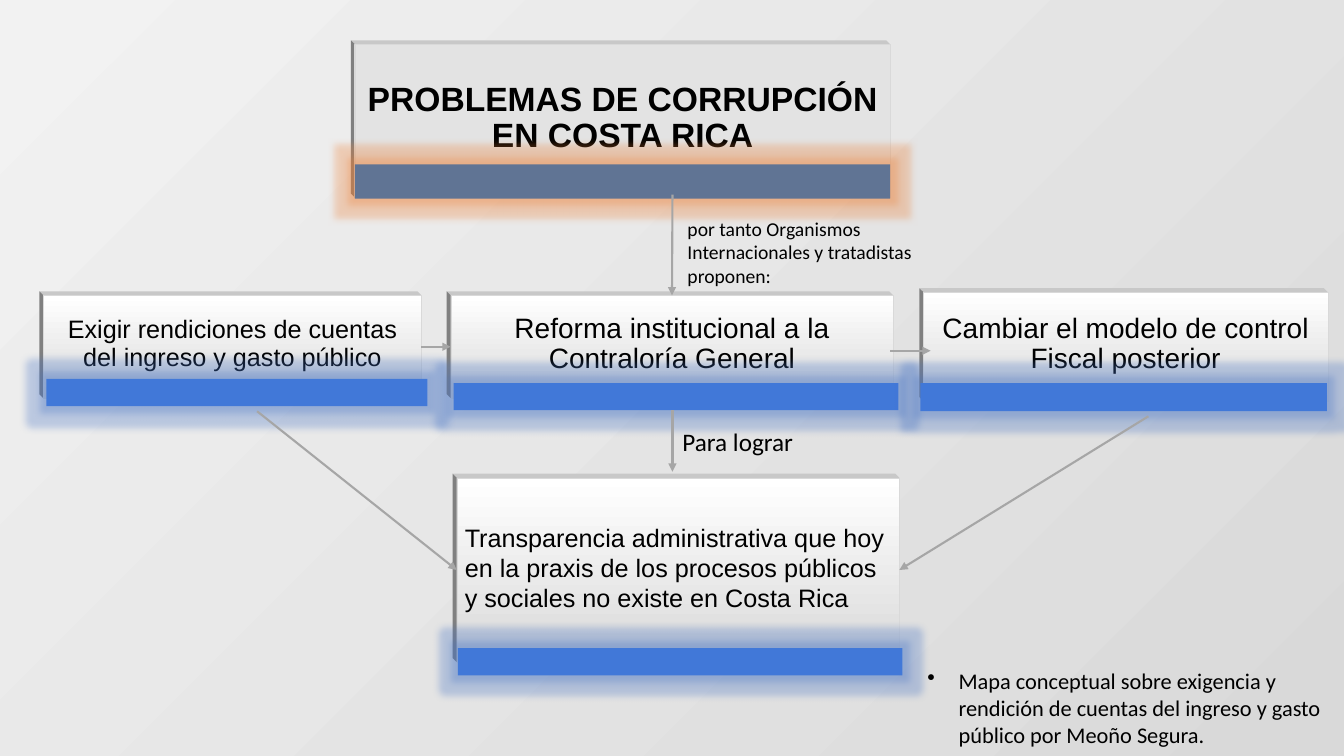
from lxml.etree import SubElement
from pptx import Presentation
from pptx.dml.color import RGBColor
from pptx.enum.shapes import MSO_CONNECTOR, MSO_SHAPE
from pptx.enum.text import MSO_ANCHOR, PP_ALIGN
from pptx.oxml.ns import qn
from pptx.util import Inches, Pt

BLACK = RGBColor(0x00, 0x00, 0x00)
WHITE = RGBColor(0xFF, 0xFF, 0xFF)
TITLE_FILL = RGBColor(0xE3, 0xE3, 0xE3)
SILVER = RGBColor(0xD9, 0xD9, 0xD9)
PALE = RGBColor(0xF2, 0xF2, 0xF2)
BEVEL_TOP = RGBColor(0xC8, 0xC8, 0xC8)
BEVEL_SIDE = RGBColor(0x80, 0x80, 0x80)
ARROW = RGBColor(0xA6, 0xA6, 0xA6)
BLUE = RGBColor(0x41, 0x78, 0xD8)
SLATE = RGBColor(0x60, 0x74, 0x94)
BLUE_GLOW = RGBColor(0x44, 0x72, 0xC4)
ORANGE_GLOW = RGBColor(0xED, 0x7D, 0x31)
BEVEL = 0.04
TOP, LEFT, RIGHT = 0, 1, 3


def set_gradient(fill, start, end, angle):
    fill.gradient()
    fill.gradient_angle = angle
    for stop, color in zip(fill.gradient_stops, (start, end)):
        stop.color.rgb = color


def add_bevel_face(slide, points, color):
    builder = slide.shapes.build_freeform(
        Inches(points[0][0]), Inches(points[0][1]))
    builder.add_line_segments([(Inches(x), Inches(y)) for x, y in points[1:]])
    face = builder.convert_to_shape()
    face.shadow.inherit = False
    face.fill.solid()
    face.fill.fore_color.rgb = color
    face.line.fill.background()


def add_bevel(slide, left, top, width, height):
    right, bottom = left + width, top + height
    corner = (left - BEVEL, top - BEVEL)
    add_bevel_face(slide, [corner, (right - BEVEL, top - BEVEL),
                           (right, top), (left, top)], BEVEL_TOP)
    add_bevel_face(slide, [corner, (left, top), (left, bottom),
                           (left - BEVEL, bottom - BEVEL)], BEVEL_SIDE)


def add_bar(slide, box, color, glow_color):
    bar = slide.shapes.add_shape(MSO_SHAPE.RECTANGLE, *map(Inches, box))
    bar.fill.solid()
    bar.fill.fore_color.rgb = color
    bar.line.fill.background()
    bar.shadow.inherit = False
    effects = bar._element.spPr.find(qn("a:effectLst"))
    glow = SubElement(effects, qn("a:glow"), rad=str(Inches(0.14)))
    tint = SubElement(glow, qn("a:srgbClr"), val=str(glow_color))
    SubElement(tint, qn("a:alpha"), val="30000")


def add_card(slide, box, bar_box, text, size, title=False, centred=True):
    """Add a bevelled panel with its text and the glowing bar at its foot."""
    add_bevel(slide, *box)
    card = slide.shapes.add_shape(MSO_SHAPE.RECTANGLE, *map(Inches, box))
    card.shadow.inherit = False
    card.line.color.rgb = SILVER
    card.line.width = Pt(1 if title else 0.25)
    if title:
        card.fill.solid()
        card.fill.fore_color.rgb = TITLE_FILL
    else:
        set_gradient(card.fill, WHITE, SILVER, 270)
    frame = card.text_frame
    frame.word_wrap = True
    frame.vertical_anchor = MSO_ANCHOR.MIDDLE
    frame.margin_left = frame.margin_right = Inches(0.01 if title else 0.08)
    frame.margin_top = Inches(0.01)
    frame.margin_bottom = Inches(0.06)
    paragraph = frame.paragraphs[0]
    paragraph.alignment = PP_ALIGN.CENTER if centred else PP_ALIGN.LEFT
    paragraph.line_spacing = 0.9 if centred else 1.0
    write(paragraph, text, "Arial", size)
    paragraph.font.bold = title
    add_bar(slide, bar_box, SLATE if title else BLUE,
            ORANGE_GLOW if title else BLUE_GLOW)
    return card


def write(paragraph, text, font_name, size):
    paragraph.text = text
    paragraph.font.name = font_name
    paragraph.font.size = Pt(size)
    paragraph.font.color.rgb = BLACK


def add_label(slide, box, text, size, wrap=True, bullet=False):
    label = slide.shapes.add_textbox(*map(Inches, box))
    label.text_frame.word_wrap = wrap
    paragraph = label.text_frame.paragraphs[0]
    write(paragraph, text, "Calibri", size)
    if bullet:
        properties = paragraph._p.get_or_add_pPr()
        properties.set("marL", str(Inches(0.31)))
        properties.set("indent", str(-Inches(0.31)))
        marker = properties.makeelement(qn("a:buChar"), {"char": "•"})
        properties.insert(0, marker)


def add_arrow(slide, start, end, begin=None, finish=None):
    """Add an arrow; begin and finish are optional (shape, side) joins."""
    arrow = slide.shapes.add_connector(
        MSO_CONNECTOR.STRAIGHT, *map(Inches, start + end))
    if begin:
        arrow.begin_connect(*begin)
    if finish:
        arrow.end_connect(*finish)
    arrow.line.color.rgb = ARROW
    arrow.line.width = Pt(1.5)
    SubElement(arrow.line._get_or_add_ln(), qn("a:tailEnd"), type="triangle")
    SubElement(arrow._element.spPr, qn("a:effectLst"))


def add_concept_map(slide):
    add_card(slide, (3.52, 0.44, 5.31, 1.52), (3.52, 1.63, 5.31, 0.34),
             "PROBLEMAS DE CORRUPCIÓN EN COSTA RICA", 24, title=True)
    accounts = add_card(
        slide, (0.43, 2.93, 3.75, 1.02), (0.46, 3.76, 3.78, 0.27),
        "Exigir rendiciones de cuentas del ingreso y gasto público", 18)
    reform = add_card(
        slide, (4.47, 2.93, 4.39, 1.02), (4.5, 3.8, 4.41, 0.27),
        "Reforma institucional a la Contraloría General", 20)
    add_card(slide, (9.16, 2.9, 4.01, 1.08), (9.13, 3.8, 4.03, 0.28),
             "Cambiar el modelo de control Fiscal posterior", 20)
    transparency = add_card(
        slide, (4.53, 4.74, 4.39, 1.83), (4.54, 6.43, 4.41, 0.27),
        "Transparencia administrativa que hoy en la praxis de los procesos "
        "públicos y sociales no existe en Costa Rica", 18, centred=False)

    add_arrow(slide, (6.67, 1.93), (6.67, 2.93), finish=(reform, TOP))
    add_arrow(slide, (4.18, 3.44), (4.47, 3.44),
              (accounts, RIGHT), (reform, LEFT))
    add_arrow(slide, (8.83, 3.48), (9.23, 3.48))
    add_arrow(slide, (2.55, 4.08), (4.53, 5.66), finish=(transparency, LEFT))
    add_arrow(slide, (6.67, 4.07), (6.67, 4.68))
    add_arrow(slide, (11.39, 4.13), (8.92, 5.66), finish=(transparency, RIGHT))


def add_labels(slide):
    add_label(slide, (6.72, 2.1, 2.61, 0.81),
              "por tanto Organismos Internacionales y tratadistas proponen:", 14)
    add_label(slide, (6.67, 4.18, 1.31, 0.4), "Para lograr", 18, wrap=False)
    add_label(slide, (9.1, 6.57, 4.23, 0.91),
              "Mapa conceptual sobre exigencia y rendición de cuentas del "
              "ingreso y gasto público por Meoño Segura.", 16, bullet=True)


def main():
    presentation = Presentation()
    presentation.slide_width = Inches(13.33)
    presentation.slide_height = Inches(7.5)
    slide = presentation.slides.add_slide(presentation.slide_layouts[6])
    set_gradient(slide.background.fill, SILVER, PALE, 135)
    add_concept_map(slide)
    add_labels(slide)
    presentation.save("out.pptx")


if __name__ == "__main__":
    main()
